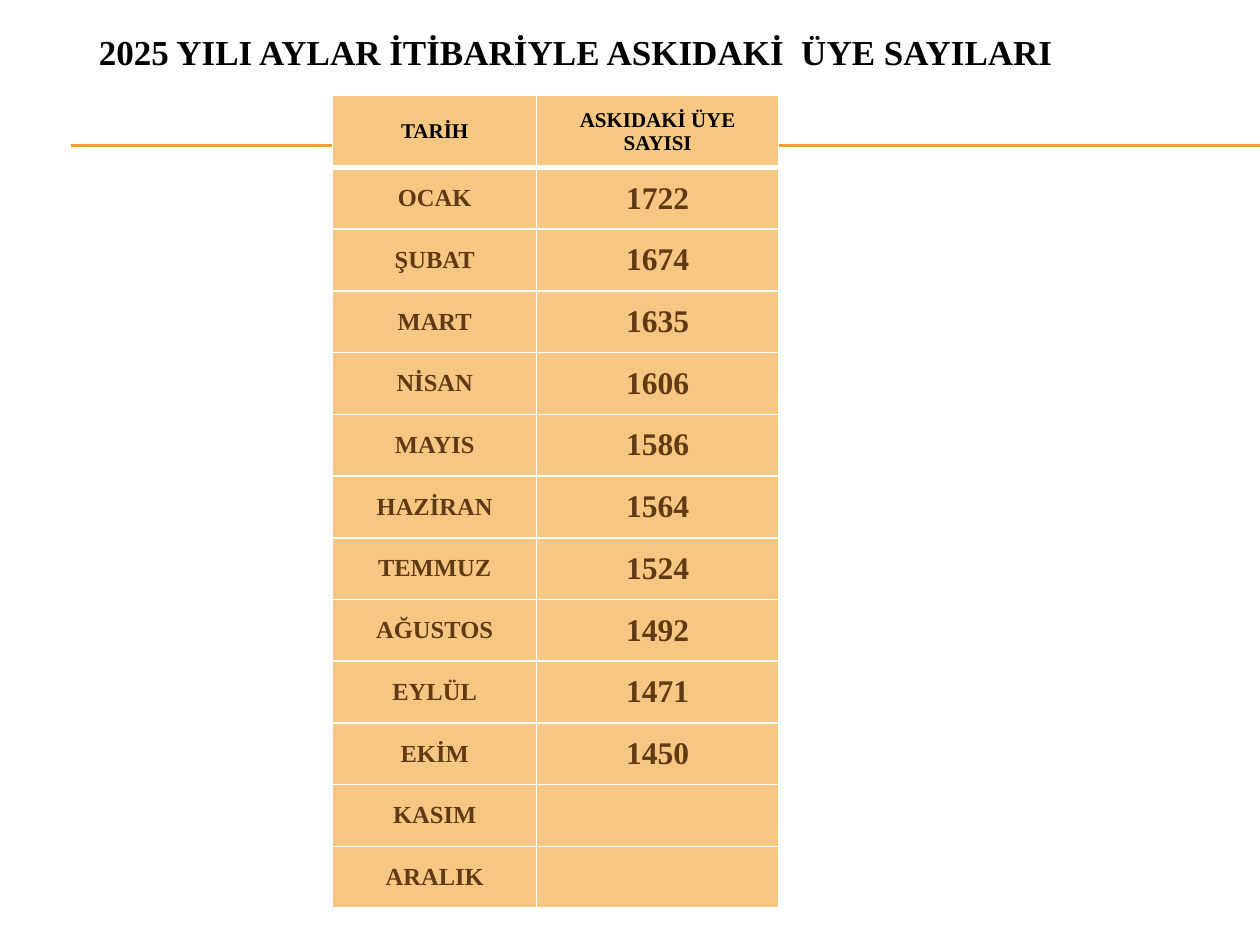
from lxml import etree
from pptx import Presentation
from pptx.dml.color import RGBColor
from pptx.enum.shapes import MSO_CONNECTOR
from pptx.enum.text import MSO_ANCHOR, PP_ALIGN
from pptx.oxml.ns import qn
from pptx.util import Inches, Pt

CENTER = PP_ALIGN.CENTER
MIDDLE = MSO_ANCHOR.MIDDLE
STRAIGHT = MSO_CONNECTOR.STRAIGHT

BLACK = RGBColor(0x00, 0x00, 0x00)
WHITE = RGBColor(0xFF, 0xFF, 0xFF)
BROWN = RGBColor(0x60, 0x3A, 0x14)
SAND = RGBColor(0xF6, 0xC7, 0x82)
AMBER = RGBColor(0xF0, 0xA2, 0x2E)
FONT = "Times New Roman"

HEADINGS = ("TARİH", "ASKIDAKİ ÜYE SAYISI")
MEMBERS = [
    ("OCAK", "1722"), ("ŞUBAT", "1674"), ("MART", "1635"), ("NİSAN", "1606"),
    ("MAYIS", "1586"), ("HAZİRAN", "1564"), ("TEMMUZ", "1524"), ("AĞUSTOS", "1492"),
    ("EYLÜL", "1471"), ("EKİM", "1450"), ("KASIM", ""), ("ARALIK", ""),
]


def write_centered(frame, text, size, color):
    frame.text = text
    paragraph = frame.paragraphs[0]
    paragraph.alignment = CENTER
    for font in [paragraph.font] + [run.font for run in paragraph.runs]:
        font.name = FONT
        font.size = Pt(size)
        font.bold = True
        font.color.rgb = color


def set_borders(cell, bottom_width):
    """Draw white cell borders, 1 pt except for the bottom one."""
    properties = cell._tc.get_or_add_tcPr()
    widths = {"a:lnL": 1, "a:lnR": 1, "a:lnT": 1, "a:lnB": bottom_width}
    # Borders must come before the fill in the cell properties
    for position, (tag, width) in enumerate(widths.items()):
        border = etree.Element(qn(tag), w=str(Pt(width)))
        fill = etree.SubElement(border, qn("a:solidFill"))
        etree.SubElement(fill, qn("a:srgbClr"), val=str(WHITE))
        properties.insert(position, border)


prs = Presentation()
prs.slide_width = Inches(10)
prs.slide_height = Inches(7.5)
slide = prs.slides.add_slide(prs.slide_layouts[5])

title = slide.shapes.title
title.left, title.top = Inches(0.28), Inches(0.05)
title.width, title.height = Inches(8.58), Inches(0.71)
title.text_frame.vertical_anchor = MIDDLE
write_centered(title.text_frame, "2025 YILI AYLAR İTİBARİYLE ASKIDAKİ  ÜYE SAYILARI", 20, BLACK)

for y in (1.15, 1.16):
    rule = slide.shapes.add_connector(STRAIGHT, Inches(0.56), Inches(y), Inches(10), Inches(y))
    rule.line.color.rgb = AMBER
    rule.line.width = Pt(0.75)
    etree.SubElement(rule._element.spPr, qn("a:effectLst"))

table = slide.shapes.add_table(
    len(MEMBERS) + 1, 2, Inches(2.64), Inches(0.76), Inches(3.54), Inches(6.46)
).table
table.columns[0].width = Inches(1.62)
table.columns[1].width = Inches(1.92)

for row_index, texts in enumerate([HEADINGS] + MEMBERS):
    is_header = row_index == 0
    table.rows[row_index].height = Inches(0.57 if is_header else 0.49)
    sizes = (12, 12) if is_header else (14, 18)
    for column_index, (text, size) in enumerate(zip(texts, sizes)):
        cell = table.cell(row_index, column_index)
        cell.vertical_anchor = MIDDLE
        cell.fill.solid()
        cell.fill.fore_color.rgb = SAND
        set_borders(cell, 3 if is_header else 1)
        if row_index == 1:
            cell._tc.tcPr.find(qn("a:lnT")).set("w", str(Pt(3)))
        write_centered(cell.text_frame, text, size, BLACK if is_header else BROWN)

prs.save("out.pptx")
